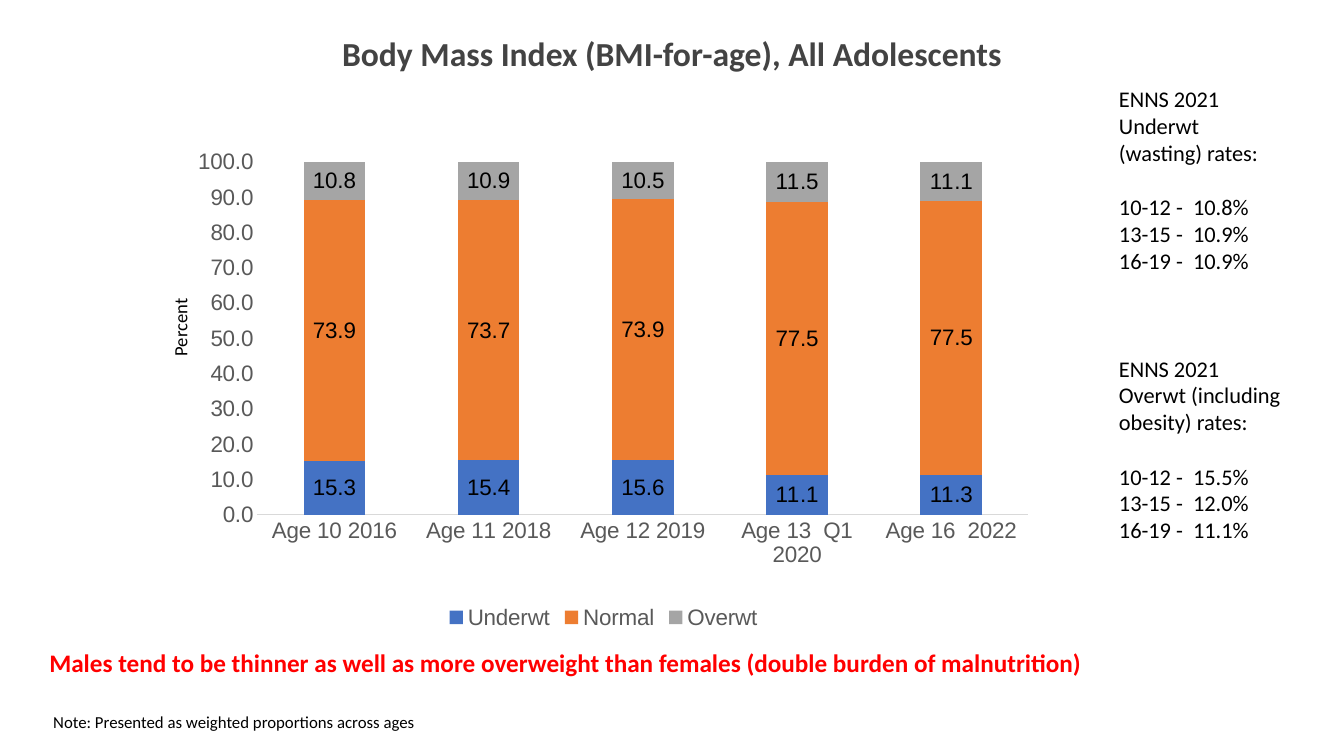
from pptx import Presentation
from pptx.chart.data import CategoryChartData
from pptx.dml.color import RGBColor
from pptx.enum.chart import XL_CHART_TYPE, XL_LEGEND_POSITION, XL_TICK_MARK
from pptx.enum.text import MSO_ANCHOR, PP_ALIGN
from pptx.oxml import parse_xml
from pptx.oxml.ns import nsdecls
from pptx.util import Inches, Pt

# Content
TITLE = "Body Mass Index (BMI-for-age), All Adolescents"
CLAIM = ("Males tend to be thinner as well as more overweight than females "
         "(double burden of malnutrition)")
NOTE = "Note: Presented as weighted proportions across ages"
AGES = ["Age 10 2016", "Age 11 2018", "Age 12 2019", "Age 13  Q1 2020", "Age 16  2022"]
SERIES = {
    "Underwt": (15.3, 15.4, 15.6, 11.1, 11.3),
    "Normal": (73.9, 73.7, 73.9, 77.5, 77.5),
    "Overwt": (10.8, 10.9, 10.5, 11.5, 11.1),
}
RATES = [
    ((11, 0.8, 1.8, 2.52),
     ["ENNS 2021", "Underwt (wasting) rates:",
      "10-12 -  10.8%", "13-15 -  10.9%", "16-19 -  10.9%"]),
    ((11, 3.47, 1.8, 2.79),
     ["ENNS 2021", "Overwt (including obesity) rates:",
      "10-12 -  15.5%", "13-15 -  12.0%", "16-19 -  11.1%"]),
]
PLOT = {"x": 0.105, "y": 0.05, "w": 0.88, "h": 0.71}
COLORS = {
    "title": "434343", "text": "000000", "claim": "FF0000",
    "axis": "595959", "rule": "D9D9D9",
    "Underwt": "4472C4", "Normal": "ED7D31", "Overwt": "A5A5A5",
}


def paint(font, size, color, face="Calibri", bold=False):
    font.name, font.size, font.bold = face, Pt(size), bold
    font.color.rgb = RGBColor.from_string(COLORS[color])


def add_text(slide, box, lines, size, color="text", bold=False):
    shape = slide.shapes.add_textbox(*map(Inches, box))
    frame = shape.text_frame
    frame.word_wrap = True
    frame.text = "\n".join(lines)
    for para in frame.paragraphs:
        paint(para.runs[0].font, size, color, bold=bold)
    return shape


def add_bars(slide):
    data = CategoryChartData(number_format="0.0")
    data.categories = AGES
    for name, vals in SERIES.items():
        data.add_series(name, vals)
    box = map(Inches, (1.64, 1.36, 8.69, 4.93))
    chart = slide.shapes.add_chart(XL_CHART_TYPE.COLUMN_STACKED, *box, data).chart
    paint(chart.font, 16, "text", "Arial")
    chart.has_title = False

    # Bars and their labels
    plot = chart.plots[0]
    plot.gap_width, plot.overlap = 150, 100
    plot.vary_by_categories = False
    for bar in plot.series:
        bar.format.fill.solid()
        bar.format.fill.fore_color.rgb = RGBColor.from_string(COLORS[bar.name])
        labels = bar.data_labels
        labels.show_value = True
        labels.number_format, labels.number_format_is_linked = "0.0", False
        paint(labels.font, 16, "text", "Arial")

    # Axes
    cat, val = chart.category_axis, chart.value_axis
    for axis in (cat, val):
        axis.major_tick_mark = axis.minor_tick_mark = XL_TICK_MARK.NONE
        axis.has_major_gridlines = False
        paint(axis.tick_labels.font, 16, "axis", "Arial")
    cat.format.line.color.rgb = RGBColor.from_string(COLORS["rule"])
    cat.format.line.width = Pt(0.75)
    val.format.line.fill.background()
    val.minimum_scale, val.maximum_scale, val.major_unit = 0, 100, 10
    val.tick_labels.number_format = "0.0"
    val.tick_labels.number_format_is_linked = False

    # Legend
    chart.has_legend = True
    chart.legend.position = XL_LEGEND_POSITION.BOTTOM
    chart.legend.include_in_layout = False
    paint(chart.legend.font, 16, "axis", "Arial")

    # Fixed plot area
    modes = "".join(f'<c:{k}Mode val="edge"/>' for k in "xy")
    sizes = "".join(f'<c:{k} val="{v}"/>' for k, v in PLOT.items())
    area = chart._chartSpace.chart.plotArea
    for old in area.findall("{*}layout"):
        area.remove(old)
    area.insert(0, parse_xml(
        f'<c:layout {nsdecls("c")}><c:manualLayout><c:layoutTarget val="inner"/>'
        f'{modes}{sizes}</c:manualLayout></c:layout>'))


def main():
    deck = Presentation()
    deck.slide_width, deck.slide_height = Inches(13.33), Inches(7.5)
    slide = deck.slides.add_slide(deck.slide_layouts[5])

    # Title
    title = slide.shapes.title
    title.left, title.top = Inches(0), Inches(0.23)
    title.width, title.height = Inches(13.33), Inches(1.04)
    frame = title.text_frame
    frame.text = TITLE
    frame.vertical_anchor = MSO_ANCHOR.TOP
    frame.margin_top = Inches(0.14)
    para = frame.paragraphs[0]
    para.alignment, para.line_spacing = PP_ALIGN.CENTER, 0.9
    paint(para.runs[0].font, 24, "title", bold=True)

    # Chart with its axis caption
    add_text(slide, (0.43, 7.01, 11.9, 0.3), [NOTE], 12)
    add_text(slide, (1.15, 2.83, 1.28, 0.33), ["Percent"], 13.3).rotation = 270
    add_bars(slide)

    # Survey rates, with a gap above the figures
    for box, lines in RATES:
        rates = add_text(slide, box, lines, 16)
        rates.text_frame.paragraphs[2].space_before = Pt(19.5)

    # Key message
    add_text(slide, (0.39, 6.37, 12.95, 0.4), [CLAIM], 18, "claim", True)
    deck.save("out.pptx")


if __name__ == "__main__":
    main()
